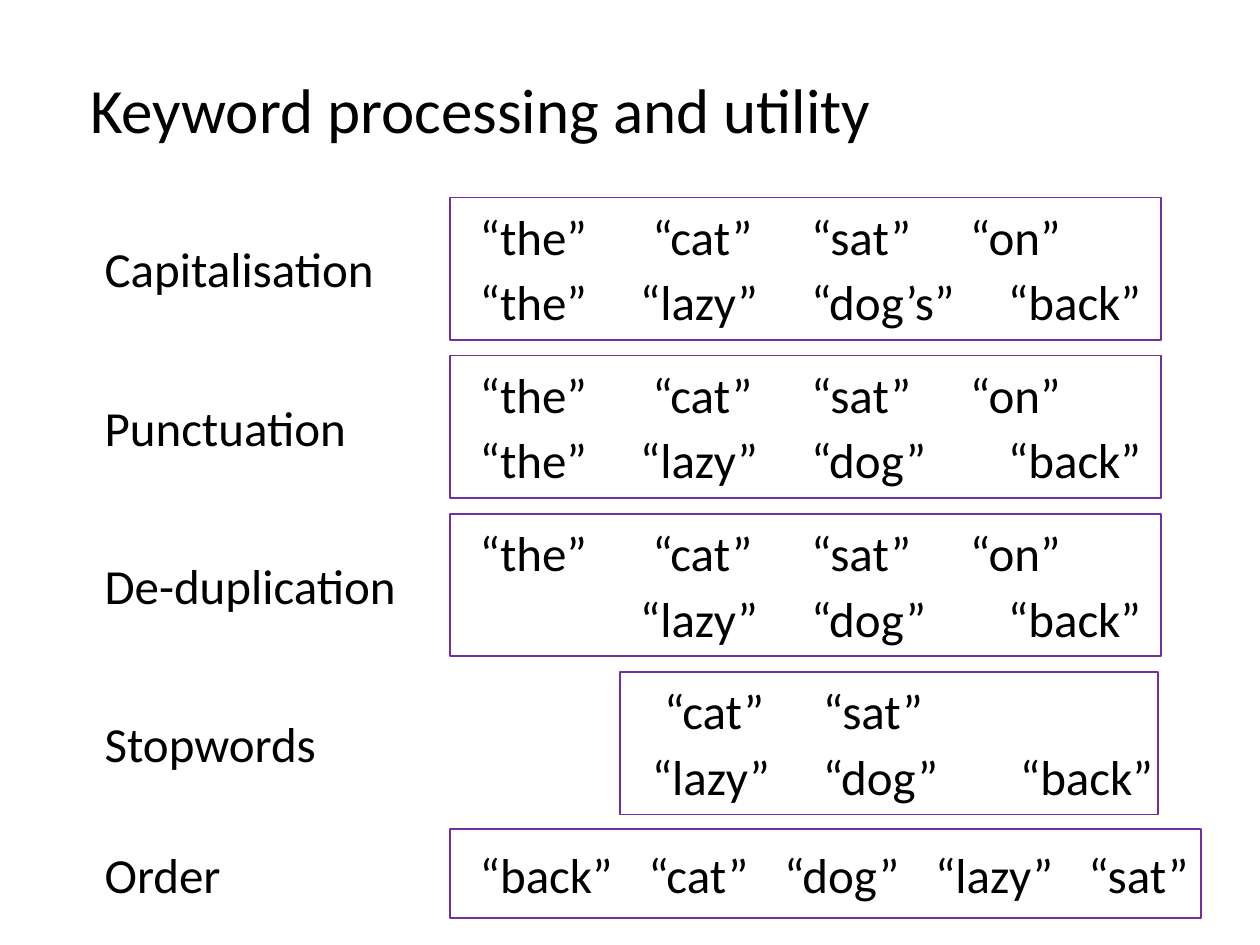
from dataclasses import dataclass

from pptx import Presentation
from pptx.dml.color import RGBColor
from pptx.enum.shapes import MSO_SHAPE
from pptx.enum.text import MSO_AUTO_SIZE
from pptx.util import Cm, Pt

RECTANGLE = MSO_SHAPE.RECTANGLE
FIT_SHAPE = MSO_AUTO_SIZE.SHAPE_TO_FIT_TEXT


@dataclass(frozen=True)
class Theme:
    font: str = "Calibri"
    text: RGBColor = RGBColor(0x00, 0x00, 0x00)
    outline: RGBColor = RGBColor(0x70, 0x30, 0xA0)
    title_size: int = 36
    body_size: int = 28
    line_width: int = 1


class SlideBuilder:
    def __init__(self, slide, theme):
        self.slide = slide
        self.theme = theme

    def group(self):
        return self.slide.shapes.add_group_shape().shapes

    def text(self, text, left, top, width, height=1.45, size=None, shapes=None):
        shapes = self.slide.shapes if shapes is None else shapes
        shape = shapes.add_textbox(Cm(left), Cm(top), Cm(width), Cm(height))
        text_frame = shape.text_frame
        text_frame.text = text
        text_frame.word_wrap = False
        text_frame.auto_size = FIT_SHAPE
        font = text_frame.paragraphs[0].runs[0].font
        font.name = self.theme.font
        font.size = Pt(size or self.theme.body_size)
        font.color.rgb = self.theme.text

    def title(self, text, left, top, width):
        self.text(text, left, top, width, 1.8, self.theme.title_size)

    def keyword(self, word, left, top, shapes):
        self.text(f"“{word}”", left, top, WORD_WIDTHS[word], shapes=shapes)

    def frame(self, left, top, width, height, shapes):
        shape = shapes.add_shape(RECTANGLE, Cm(left), Cm(top), Cm(width), Cm(height))
        shape.shadow.inherit = False
        shape.fill.background()
        shape.line.color.rgb = self.theme.outline
        shape.line.width = Pt(self.theme.line_width)


WORD_WIDTHS = {
    "the": 2.69, "cat": 2.57, "sat": 2.57, "on": 2.36,
    "lazy": 2.92, "dog": 2.87, "dog’s": 3.45, "back": 3.23,
}
LABEL_LEFT = 1.86
FRAME_LEFT, FRAME_WIDTH, FRAME_HEIGHT = 9.07, 14.33, 2.87
WORD_LEFT = 9.42
WORD_COLUMNS = (
    (WORD_LEFT, 12.9, 16.1, 19.3),
    (WORD_LEFT, 12.65, 16.1, 20.07),
)
LINE_OFFSETS = (0.05, 1.37)
FIRST_TOP, STEP_PITCH = 3.98, 3.19
ORDER_TOP, WORD_GAP = 16.71, 0.17

FIRST_LINE = ("the", "cat", "sat", "on")
STEPS = (
    ("Capitalisation", 6.1, (FIRST_LINE, ("the", "lazy", "dog’s", "back")),
     FRAME_LEFT, FRAME_WIDTH, 0),
    ("Punctuation", 5.44, (FIRST_LINE, ("the", "lazy", "dog", "back")),
     FRAME_LEFT, FRAME_WIDTH, 0),
    ("De-duplication", 6.45, (FIRST_LINE, (None, "lazy", "dog", "back")),
     FRAME_LEFT, FRAME_WIDTH, 0),
    ("Stopwords", 4.83, ((None, "cat", "sat", None), (None, "lazy", "dog", "back")),
     12.5, 10.85, 0.24),
)


def add_steps(builder):
    for index, (label, label_width, lines, left, width, shift) in enumerate(STEPS):
        top = FIRST_TOP + index * STEP_PITCH
        builder.text(label, LABEL_LEFT, top + 0.71, label_width)
        group = builder.group()
        for words, columns, offset in zip(lines, WORD_COLUMNS, LINE_OFFSETS):
            for word, column in zip(words, columns):
                if word:
                    builder.keyword(word, column + shift, top + offset, group)
        builder.frame(left, top, width, FRAME_HEIGHT, group)


def add_order(builder):
    text_top = ORDER_TOP + 0.18
    builder.text("Order", LABEL_LEFT, text_top, 2.87)
    group = builder.group()
    left = WORD_LEFT
    for word in sorted(("cat", "sat", "lazy", "dog", "back")):
        builder.keyword(word, left, text_top, group)
        left += WORD_WIDTHS[word] + WORD_GAP
    builder.frame(FRAME_LEFT, ORDER_TOP, 15.14, 1.8, group)


def main():
    presentation = Presentation()
    presentation.slide_width = Cm(25.4)
    presentation.slide_height = Cm(19.05)
    slide = presentation.slides.add_slide(presentation.slide_layouts[6])
    builder = SlideBuilder(slide, Theme())
    builder.title("Keyword processing and utility", 1.57, 1.3, 16.41)
    add_steps(builder)
    add_order(builder)
    presentation.save("out.pptx")


if __name__ == "__main__":
    main()
